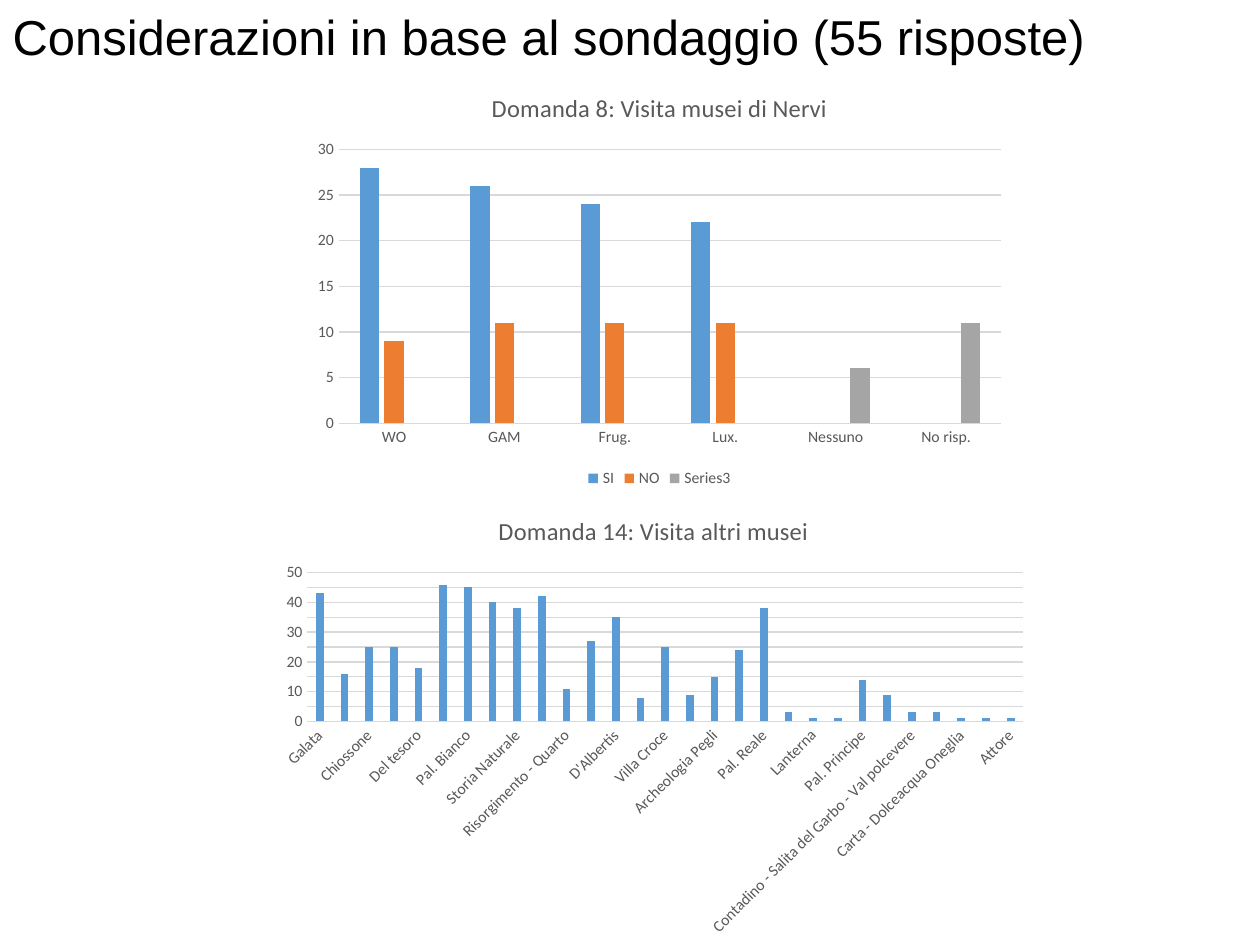
"""Build the survey slide with two column charts on museum visits."""
from pptx import Presentation
from pptx.chart.data import CategoryChartData
from pptx.dml.color import RGBColor
from pptx.enum.chart import XL_CHART_TYPE, XL_LEGEND_POSITION, XL_TICK_MARK
from pptx.enum.text import MSO_ANCHOR, PP_ALIGN
from pptx.util import Pt


def paint(color):
    """Turn a hex string into a colour."""
    return RGBColor.from_string(color)


def write(frame, text, size, color, face):
    """Put formatted text into a text frame."""
    frame.text = text
    font = frame.paragraphs[0].runs[0].font
    font.size, font.name, font.bold = Pt(size), face, False
    font.color.rgb = paint(color)


GREY, RULE = "595959", "D9D9D9"

others = {
    "Galata": 43, "Diocesano": 16, "Chiossone": 25, "Sant'Agostino": 25,
    "Del tesoro": 18, "Pal. Rosso": 46, "Pal. Bianco": 45, "Pal. Tursi": 40,
    "Storia Naturale": 38, "Pal. Ducale": 42, "Risorgimento - Quarto": 11,
    "Pal. Spinola": 27, "D'Albertis": 35, "Cappuccini": 8, "Villa Croce": 25,
    "Navale Pegli": 9, "Archeologia Pegli": 15, "Commenda Pre'": 24,
    "Pal. Reale": 38, "No risp.": 3, "Lanterna": 1, "Cinema": 1,
    "Pal. Principe": 14, "Risorgimento - Via lomellini": 9,
    "Contadino - Salita del Garbo - Val polcevere": 3, "Tessuto - Zoagli": 3,
    "Carta - Dolceacqua Oneglia": 1, "Filigrana - Campo Ligure": 1, "Attore": 1,
}
nervi = [
    ("SI", [28, 26, 24, 22, None, None], "5B9BD5"),
    ("NO", [9, 11, 11, 11, None, None], "ED7D31"),
    ("Series3", [None, None, None, None, 6, 11], "A5A5A5"),
]
charts = [
    ("Domanda 14: Visita altri musei", (153.4, 282.2, 440, 257.8), list(others),
     [("Series 1", list(others.values()), "5B9BD5")], 50, False),
    ("Domanda 8: Visita musei di Nervi", (173.5, 41, 406.8, 240.5),
     ["WO", "GAM", "Frug.", "Lux.", "Nessuno", "No risp."], nervi, 30, True),
]

deck = Presentation()
deck.slide_width, deck.slide_height = Pt(720), Pt(540)
slide = deck.slides.add_slide(deck.slide_layouts[5])

title = slide.shapes.title
title.left, title.top, title.width, title.height = Pt(0), Pt(0), Pt(635), Pt(41)
frame = title.text_frame
write(frame, "Considerazioni in base al sondaggio (55 risposte)",
      size=28, color="000000", face="Arial")
frame.word_wrap = False
frame.vertical_anchor = MSO_ANCHOR.TOP
frame.paragraphs[0].alignment = PP_ALIGN.LEFT

for name, box, cats, rows, top, keyed in charts:
    data = CategoryChartData()
    data.categories = cats
    for label, vals, _ in rows:
        data.add_series(label, vals)
    chart = slide.shapes.add_chart(
        XL_CHART_TYPE.COLUMN_CLUSTERED, *map(Pt, box), data).chart
    chart.font.size, chart.font.name = Pt(10), "Calibri"
    chart.has_title = True
    write(chart.chart_title.text_frame, name, size=14, color=GREY, face="Calibri")
    chart.chart_title.include_in_layout = False

    plot = chart.plots[0]
    plot.gap_width, plot.overlap, plot.vary_by_categories = 219, -27, False
    for series, (_, _, color) in zip(plot.series, rows):
        series.format.fill.solid()
        series.format.fill.fore_color.rgb = paint(color)

    across, upright = chart.category_axis, chart.value_axis
    texts = [across.tick_labels.font, upright.tick_labels.font]
    across.format.line.color.rgb = paint(RULE)
    across.format.line.width = Pt(0.75)
    upright.format.line.fill.background()
    upright.minimum_scale, upright.maximum_scale, upright.major_unit = 0, top, 5
    grid = upright.major_gridlines.format.line
    grid.color.rgb, grid.width = paint(RULE), Pt(0.75)
    for axis in (across, upright):
        axis.major_tick_mark = axis.minor_tick_mark = XL_TICK_MARK.NONE

    chart.has_legend = keyed
    if keyed:
        chart.legend.position = XL_LEGEND_POSITION.BOTTOM
        chart.legend.include_in_layout = False
        texts.append(chart.legend.font)
    for font in texts:
        font.size, font.name = Pt(9), "Calibri"
        font.color.rgb = paint(GREY)

deck.save("out.pptx")
